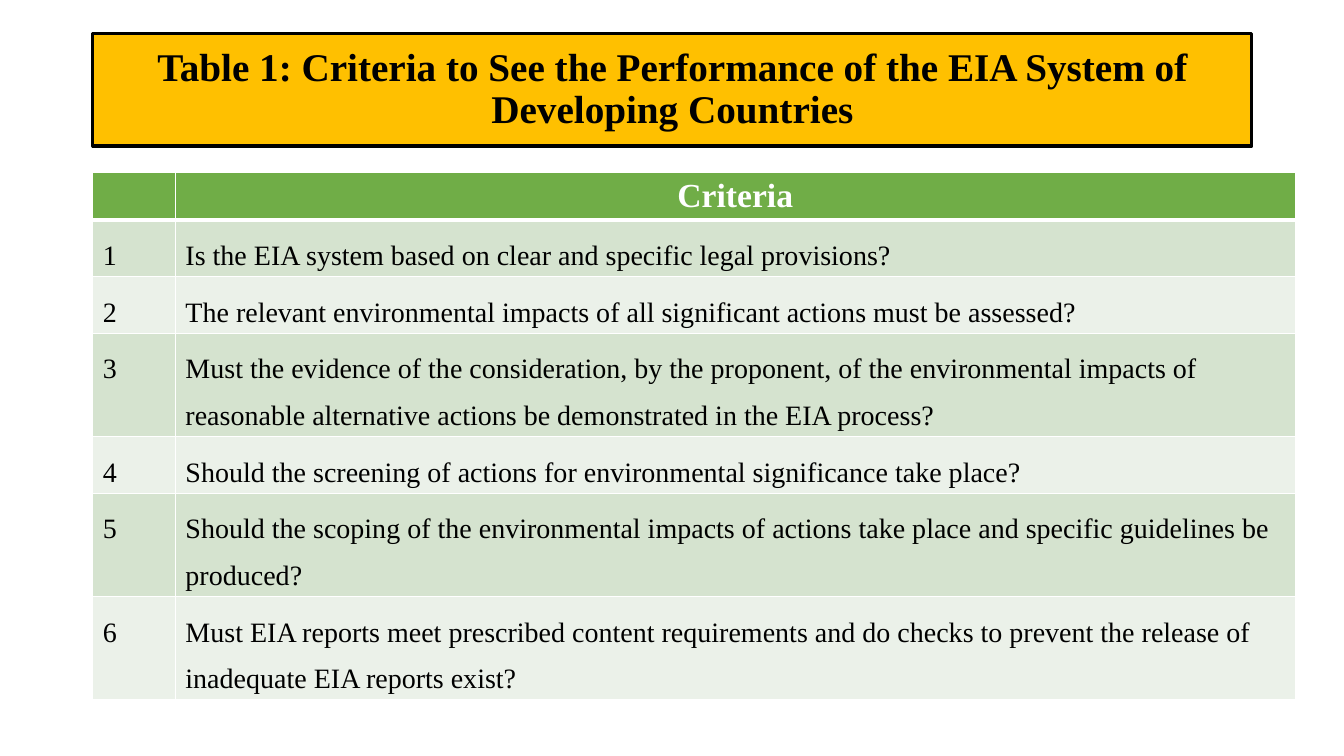
from dataclasses import dataclass

from lxml import etree
from pptx import Presentation
from pptx.dml.color import RGBColor
from pptx.enum.shapes import MSO_SHAPE
from pptx.enum.text import MSO_ANCHOR, PP_ALIGN
from pptx.oxml.ns import qn
from pptx.util import Cm, Pt

RECT = MSO_SHAPE.RECTANGLE
MIDDLE = MSO_ANCHOR.MIDDLE
LEFT, CENTER, JUSTIFY = PP_ALIGN.LEFT, PP_ALIGN.CENTER, PP_ALIGN.JUSTIFY

FONT = "Times New Roman"
COLORS = {
    "black": "000000",
    "white": "FFFFFF",
    "gold": "FFC000",
    "head": "70AD47",
    "odd": "D5E3CF",
    "even": "EBF1E9",
}
MARGIN = 2.34
WIDTHS = (2.08, 28.22)
HEAD_HEIGHT = 1.17
ROW_HEIGHTS = {1: 1.42, 2: 2.6}
TITLE = "Table 1: Criteria to See the Performance of the EIA System of Developing Countries"
CRITERIA = (
    ("Is the EIA system based on clear and specific legal provisions?",),
    ("The relevant environmental impacts of all significant actions must be assessed?",),
    (
        "Must the evidence of the consideration, by the proponent, of the environmental impacts of",
        "reasonable alternative actions be demonstrated in the EIA process?",
    ),
    ("Should the screening of actions for environmental significance take place?",),
    (
        "Should the scoping of the environmental impacts of actions take place and specific guidelines be",
        "produced?",
    ),
    (
        "Must EIA reports meet prescribed content requirements and do checks to prevent the release of",
        "inadequate EIA reports exist?",
    ),
)


@dataclass(frozen=True)
class Style:
    size: int
    color: str
    bold: bool
    align: PP_ALIGN
    spacing: float


@dataclass(frozen=True)
class Row:
    cells: tuple[tuple[str, ...], ...]
    styles: tuple[Style, ...]
    fill: str
    height: float
    top: int = 1
    bottom: int = 1


TITLE_STYLE = Style(28, "black", True, CENTER, 0.9)
HEAD_STYLE = Style(24, "white", True, CENTER, 1.0)
NUMBER_STYLE = Style(20, "black", False, LEFT, 1.5)
BODY_STYLE = Style(20, "black", False, JUSTIFY, 1.5)


def rgb(name: str) -> RGBColor:
    return RGBColor.from_string(COLORS[name])


def write(frame, lines: tuple[str, ...], style: Style) -> None:
    """Put each line into its own paragraph of the text frame."""
    for index, line in enumerate(lines):
        para = frame.add_paragraph() if index else frame.paragraphs[0]
        para.text = line
        para.alignment = style.align
        para.line_spacing = style.spacing
        para.font.name = FONT
        para.font.size = Pt(style.size)
        para.font.bold = style.bold
        para.font.color.rgb = rgb(style.color)


def add_borders(cell, top: int, bottom: int) -> None:
    props = cell._tc.get_or_add_tcPr()
    for side, width in (("L", 1), ("R", 1), ("T", top), ("B", bottom)):
        line = etree.SubElement(props, qn(f"a:ln{side}"), w=str(Pt(width)))
        fill = etree.SubElement(line, qn("a:solidFill"))
        etree.SubElement(fill, qn("a:srgbClr"), val=COLORS["white"])


def add_title(slide) -> None:
    box = slide.shapes.add_shape(RECT, Cm(MARGIN), Cm(0.84), Cm(29.21), Cm(2.84))
    box.shadow.inherit = False
    box.fill.solid()
    box.fill.fore_color.rgb = rgb("gold")
    box.line.color.rgb = rgb("black")
    box.line.width = Pt(2.25)
    box.text_frame.word_wrap = True
    box.text_frame.vertical_anchor = MIDDLE
    write(box.text_frame, (TITLE,), TITLE_STYLE)


def make_rows() -> list[Row]:
    rows = [Row(((), ("Criteria",)), (HEAD_STYLE, HEAD_STYLE), "head", HEAD_HEIGHT, bottom=3)]
    for number, lines in enumerate(CRITERIA, start=1):
        rows.append(Row(
            cells=((str(number),), lines),
            styles=(NUMBER_STYLE, BODY_STYLE),
            fill="odd" if number % 2 else "even",
            height=ROW_HEIGHTS[len(lines)],
            top=3 if number == 1 else 1,
        ))
    return rows


def add_criteria(slide) -> None:
    rows = make_rows()
    height = sum(row.height for row in rows)
    table = slide.shapes.add_table(
        len(rows), len(WIDTHS), Cm(MARGIN), Cm(4.35), Cm(sum(WIDTHS)), Cm(height)
    ).table
    for column, width in zip(table.columns, WIDTHS):
        column.width = Cm(width)
    for line, row in zip(table.rows, rows):
        line.height = Cm(row.height)
        for cell, text, style in zip(line.cells, row.cells, row.styles):
            add_borders(cell, row.top, row.bottom)
            cell.fill.solid()
            cell.fill.fore_color.rgb = rgb(row.fill)
            write(cell.text_frame, text, style)


def main() -> None:
    deck = Presentation()
    deck.slide_width, deck.slide_height = Cm(33.87), Cm(19.05)
    slide = deck.slides.add_slide(deck.slide_layouts[6])
    add_title(slide)
    add_criteria(slide)
    deck.save("out.pptx")


if __name__ == "__main__":
    main()
